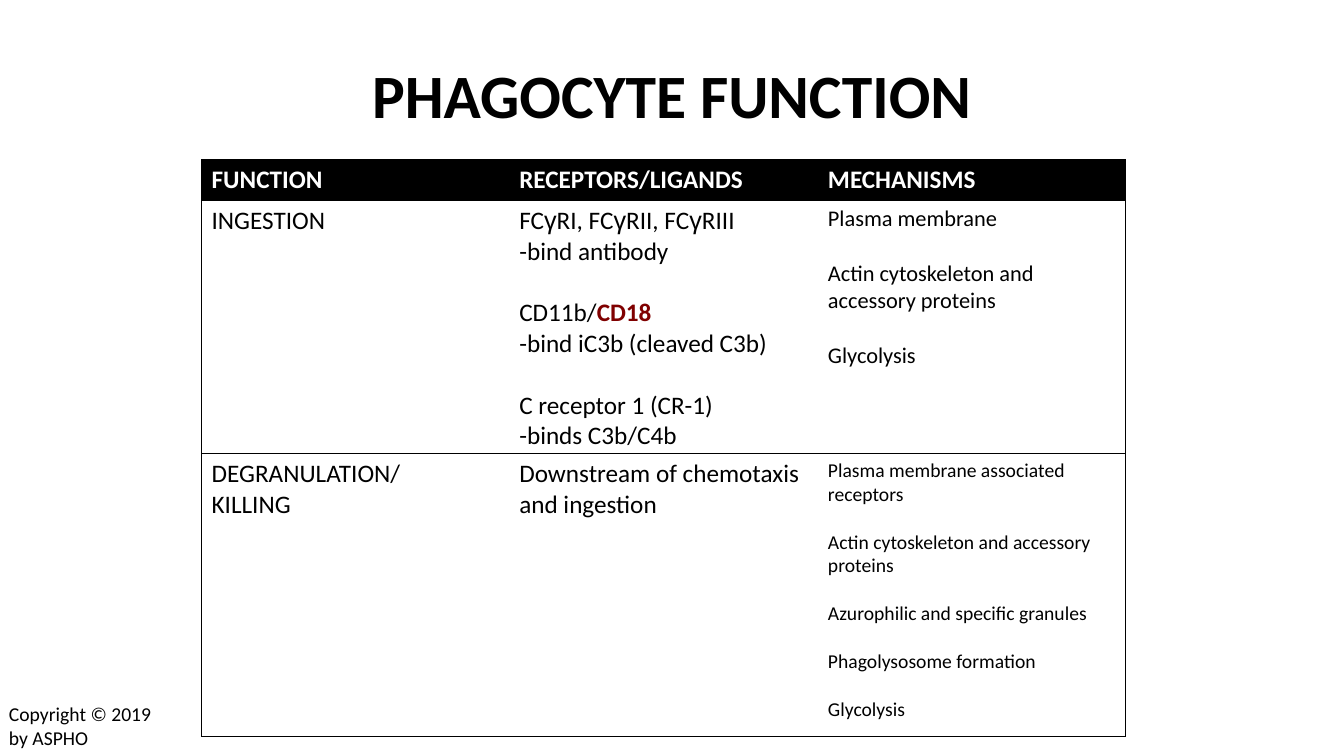
from lxml import etree
from pptx import Presentation
from pptx import util as u
from pptx.dml.color import RGBColor
from pptx.enum import text
from pptx.oxml.ns import qn

SCALE = 9525
BLACK, WHITE, MAROON = "000000", "FFFFFF", "800000"
GAMMA = ("γ", {"name": "Arial"})


def px(length):
    return u.Emu(length * SCALE)


def colour(value):
    return RGBColor.from_string(value)


class Slide:
    family = "Calibri"
    line_height = 1.22

    def __init__(self, deck):
        self.page = deck.slides.add_slide(deck.slide_layouts[6])

    def style(self, font, size=None, ink=None, bold=None, name=None):
        if size:
            font.size = u.Pt(size)
        if ink:
            font.color.rgb = colour(ink)
        if bold is not None:
            font.bold = bold
        if name:
            font.name = name

    def fill_text(self, frame, groups, size, ink=BLACK, bold=False):
        lines = [(line, number > 0 and index == 0)
                 for number, group in enumerate(groups)
                 for index, line in enumerate(group)]
        for index, (line, gap) in enumerate(lines):
            para = frame.add_paragraph() if index else frame.paragraphs[0]
            self.style(para.font, size, ink, bold, self.family)
            if gap:
                para.space_before = u.Pt(round(size * self.line_height, 1))
            for words, changes in [(line, {})] if isinstance(line, str) else line:
                span = para.add_run()
                span.text = words
                self.style(span.font, **changes)

    def label(self, left, top, width, height, words, size, bold=False,
              align=text.PP_ALIGN.LEFT, anchor=text.MSO_ANCHOR.TOP):
        box = self.page.shapes.add_textbox(px(left), px(top), px(width), px(height))
        frame = box.text_frame
        frame.word_wrap = True
        frame.vertical_anchor = anchor
        self.fill_text(frame, [[words]], size, bold=bold)
        frame.paragraphs[0].alignment = align

    def border(self, cell, side, visible):
        line = etree.SubElement(cell._tc.get_or_add_tcPr(), qn("a:ln" + side),
                                w=str(u.Pt(0.75)))
        if visible:
            fill = etree.SubElement(line, qn("a:solidFill"))
            etree.SubElement(fill, qn("a:srgbClr"), val=BLACK)
        else:
            etree.SubElement(line, qn("a:noFill"))

    def table(self, left, top, widths, heights, rows):
        grid = self.page.shapes.add_table(
            len(heights), len(widths), px(left), px(top),
            px(sum(widths)), px(sum(heights))).table
        grid.first_row = grid.horz_banding = False
        for column, width in zip(grid.columns, widths):
            column.width = px(width)
        for row, height in zip(grid.rows, heights):
            row.height = px(height)
        for row, entries in enumerate(rows):
            for column, (size, groups) in enumerate(entries):
                cell = grid.cell(row, column)
                self.border(cell, "L", column == 0)
                self.border(cell, "R", column == len(widths) - 1)
                self.border(cell, "T", True)
                self.border(cell, "B", True)
                header = row == 0
                if header:
                    cell.fill.solid()
                    cell.fill.fore_color.rgb = colour(BLACK)
                else:
                    cell.fill.background()
                self.fill_text(cell.text_frame, groups, size,
                               WHITE if header else BLACK, header)


def main():
    deck = Presentation()
    deck.slide_width, deck.slide_height = px(1280), px(720)
    slide = Slide(deck)

    slide.label(64, 29, 1152, 120, "PHAGOCYTE FUNCTION", 44, True,
                text.PP_ALIGN.CENTER, text.MSO_ANCHOR.MIDDLE)

    headings = [(18, [[name]]) for name in
                ("FUNCTION", "RECEPTORS/LIGANDS", "MECHANISMS")]
    ingestion = [
        (18, [["INGESTION"]]),
        (18, [
            [[("FC", {}), GAMMA, ("RI, FC", {}), GAMMA, ("RII, FC", {}), GAMMA,
              ("RIII", {})],
             "-bind antibody"],
            [[("CD11b/", {}), ("CD18", {"ink": MAROON, "bold": True})],
             "-bind iC3b (cleaved C3b)"],
            ["C receptor 1 (CR-1)", "-binds C3b/C4b"],
        ]),
        (16, [["Plasma membrane"],
              ["Actin cytoskeleton and accessory proteins"],
              ["Glycolysis"]]),
    ]
    killing = [
        (18, [["DEGRANULATION/", "KILLING"]]),
        (18, [["Downstream of chemotaxis and ingestion"]]),
        (14, [["Plasma membrane associated receptors"],
              ["Actin cytoskeleton and accessory proteins"],
              ["Azurophilic and specific granules"],
              ["Phagolysosome formation"],
              ["Glycolysis"]]),
    ]
    slide.table(192, 152, [293, 294, 293], [39, 240, 269],
                [headings, ingestion, killing])

    slide.label(-1, 664, 169, 55, "Copyright © 2019 by ASPHO", 14)
    deck.save("out.pptx")


if __name__ == "__main__":
    main()
